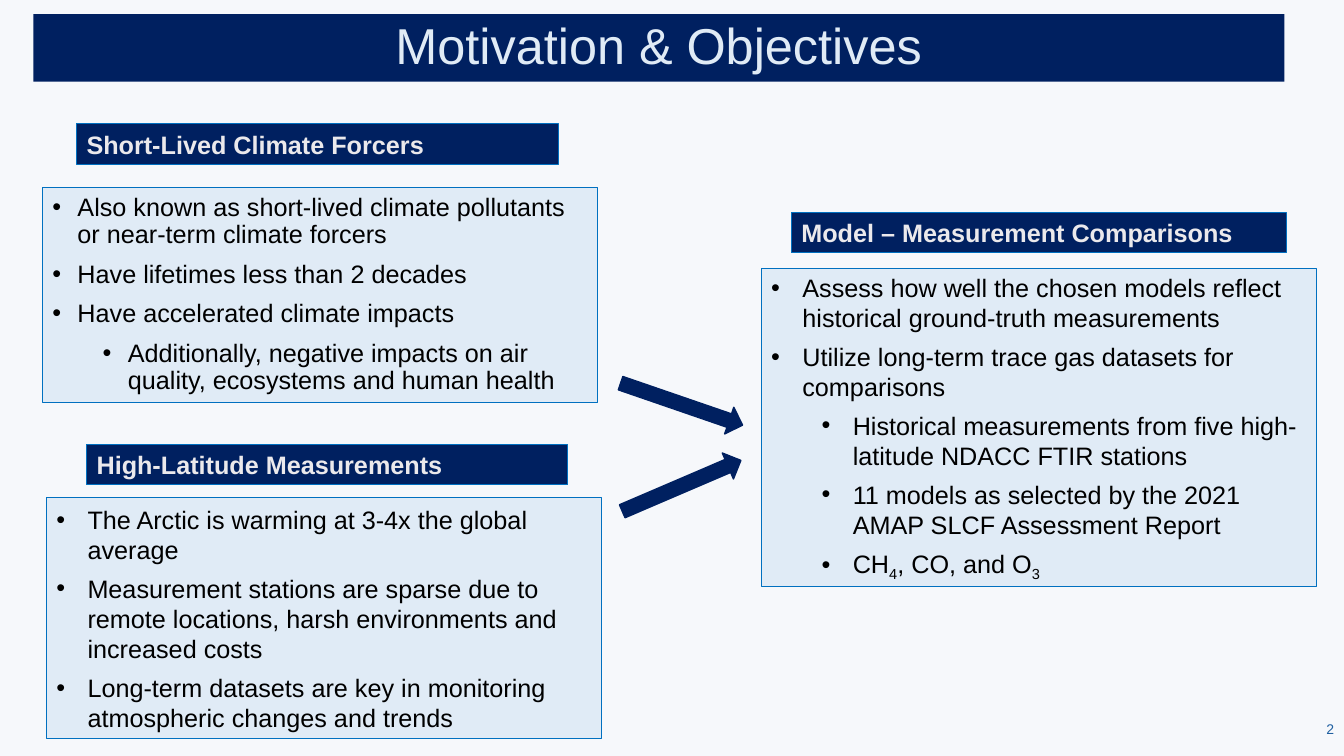
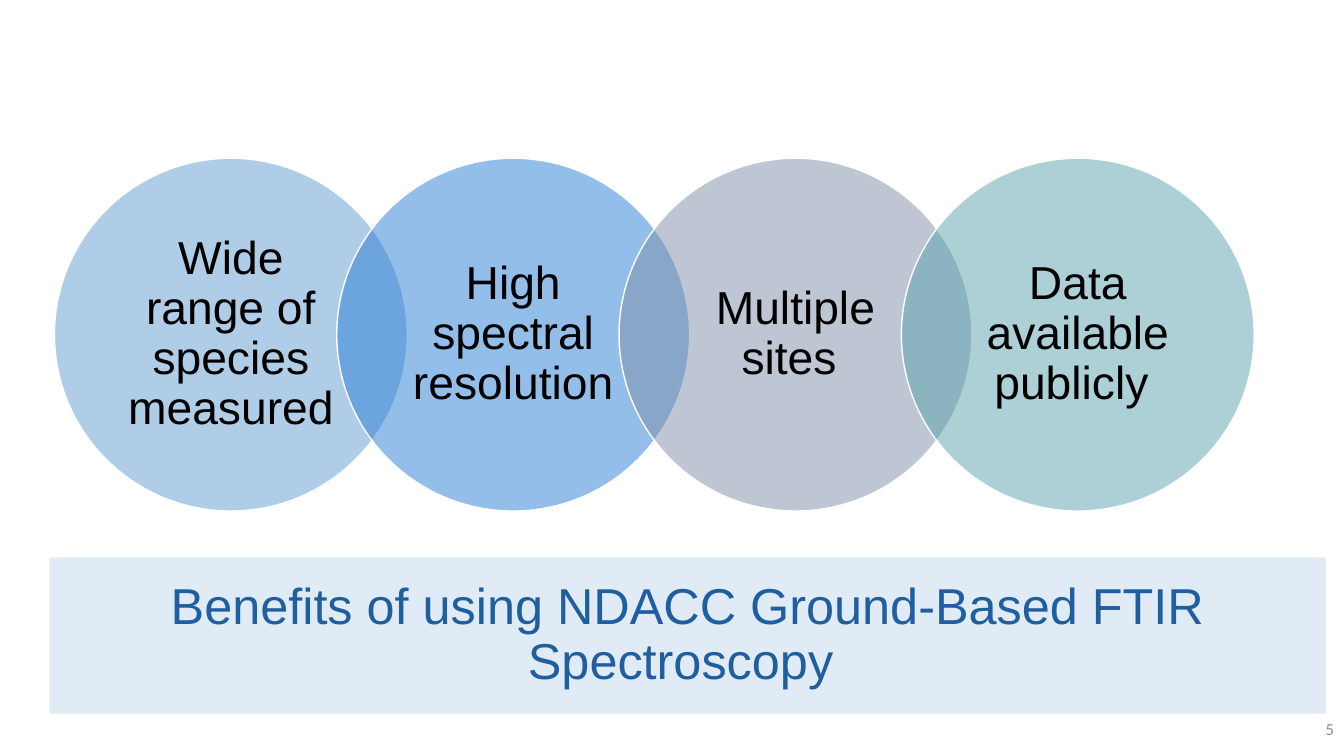
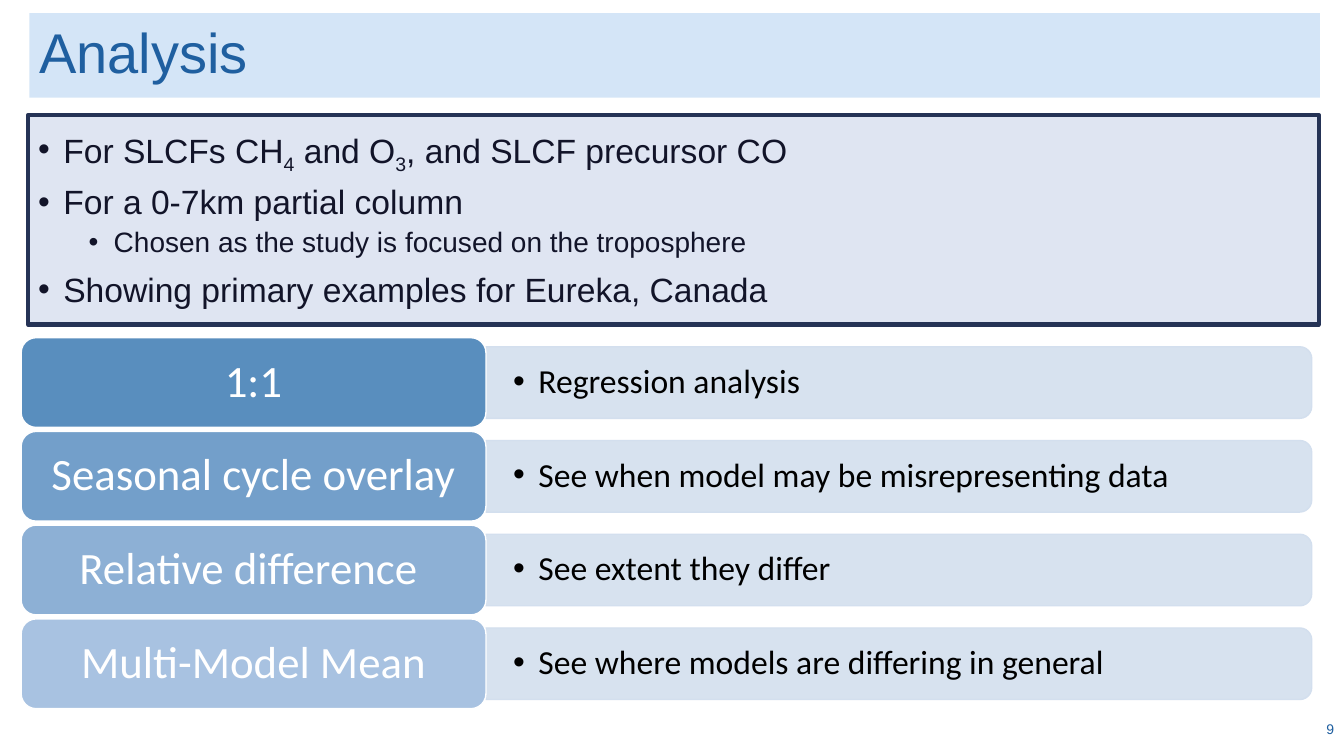
"""Builds three slides on trace gas measurements and model comparisons."""
import dataclasses

import lxml.etree
import pptx
import pptx.dml.color
import pptx.enum.shapes
import pptx.enum.text
import pptx.oxml.ns
import pptx.util

Inches = pptx.util.Inches
Pt = pptx.util.Pt
SHAPES = pptx.enum.shapes.MSO_SHAPE
ALIGN = pptx.enum.text.PP_ALIGN
ANCHOR = pptx.enum.text.MSO_ANCHOR
qn = pptx.oxml.ns.qn


@dataclasses.dataclass(frozen=True)
class Theme:
    """Colours, fonts and type sizes of the deck."""
    heading_font: str = "Arial"
    row_font: str = "Calibri"
    navy: str = "002060"
    blue: str = "1F5FA0"
    edge: str = "0070C0"
    pale: str = "E0EBF6"
    title_pale: str = "D4E5F7"
    heading_text: str = "EBE9EC"
    mist: str = "F6F8FB"
    white: str = "FFFFFF"
    black: str = "000000"
    grey: str = "8C8C8C"
    scope_fill: str = "DBE2F1"
    scope_edge: str = "253356"
    scope_text: str = "121429"
    row_fill: str = "D3DFEE"
    title_size: int = 36
    large_title_size: int = 40
    body_size: int = 18
    circle_size: int = 33
    label_size: int = 32
    scope_size: int = 24
    scope_detail_size: int = 20
    number_size: int = 10
    large_number_size: int = 12


THEME = Theme()

MOTIVATION = {
    "title": "Motivation & Objectives", "number": "2", "background": THEME.mist,
    "title_box": (0.33, 0.14, 12.41, 0.67), "title_fill": THEME.navy,
    "title_text": {"color": THEME.pale},
}
BENEFITS = {
    "title": "Benefits of using NDACC Ground-Based FTIR Spectroscopy ", "number": "5",
    "background": THEME.white,
    "title_box": (0.49, 5.53, 12.66, 1.55), "title_fill": THEME.pale,
    "number_text": {"font": THEME.row_font, "sizes": (THEME.large_number_size,),
                    "color": THEME.grey},
}
ANALYSIS = {
    "title": "Analysis", "number": "9", "background": THEME.white,
    "title_box": (0.29, 0.13, 12.8, 0.84), "title_fill": THEME.title_pale,
    "title_text": {"sizes": (THEME.large_title_size,), "align": ALIGN.LEFT},
}

TOPICS = [
    ("Short-Lived Climate Forcers", (0.76, 1.23, 4.78, 0.4), (0.42, 1.86, 5.51, 2.13),
     {"hang": 0.25, "line_spacing": 0.9, "after": 2.7}, [
         (0, "Also known as short-lived climate pollutants or near-term\u00a0climate forcers"),
         (0, "Have lifetimes less than 2 decades"),
         (0, "Have accelerated climate impacts"),
         (1, "Additionally, negative impacts on air quality, ecosystems and human health")]),
    ("High-Latitude Measurements", (0.86, 4.41, 4.77, 0.4), (0.46, 4.94, 5.51, 2.39),
     {"hang": 0.31}, [
         (0, "The Arctic is warming at 3-4x the global average"),
         (0, "Measurement stations are sparse due to remote locations, "
             "harsh environments and increased costs"),
         (0, "Long-term datasets are key in monitoring atmospheric changes and trends")]),
    ("Model – Measurement Comparisons", (7.85, 2.11, 4.91, 0.4), (7.55, 2.66, 5.51, 3.16),
     {"hang": 0.31}, [
         (0, "Assess how well the chosen models reflect historical ground-truth measurements"),
         (0, "Utilize long-term trace gas datasets for comparisons"),
         (1, "Historical measurements from five high-latitude NDACC FTIR stations"),
         (1, "11 models as selected by the 2021 AMAP SLCF Assessment Report"),
         (1, "CH_4_, CO, and O_3_")]),
]
ARROWS = [(3.87, 19), (4.68, 336.8)]

CIRCLES = [
    ("Wide range of species measured ", "629DD1"),
    ("High spectral resolution ", "297FD5"),
    ("Multiple sites ", "7F8FA9"),
    ("Data available publicly ", "5AA2AE"),
]

SCOPE = [
    (0, "For SLCFs CH_4_ and O_3_, and SLCF precursor CO"),
    (0, "For a 0-7km partial column"),
    (1, "Chosen as the study is focused on the troposphere"),
    (0, "Showing primary examples for Eureka, Canada"),
]
METHODS = [
    ("1:1", "Regression analysis", "598EBE"),
    ("Seasonal cycle overlay", "See when model may be misrepresenting data", "739FCA"),
    ("Relative difference ", "See extent they differ", "8DB0D5"),
    ("Multi-Model Mean", "See where models are differing in general", "A8C2E1"),
]

BASE_TEXT = {
    "font": THEME.heading_font, "sizes": (THEME.body_size,), "color": THEME.black,
    "bold": False, "align": ALIGN.LEFT, "anchor": ANCHOR.MIDDLE, "line_spacing": 1.0,
    "before": (0,), "after": 0, "hang": None, "insets": (0.1, 0.05),
}
TITLE_TEXT = {"sizes": (THEME.title_size,), "color": THEME.blue,
              "align": ALIGN.CENTER, "line_spacing": 0.9}
NUMBER_TEXT = {"sizes": (THEME.number_size,), "color": THEME.blue, "align": ALIGN.RIGHT}
HEADING_TEXT = {"color": THEME.heading_text, "bold": True, "anchor": ANCHOR.TOP}
TOPIC_TEXT = {"before": (6,)}
CIRCLE_TEXT = {"sizes": (THEME.circle_size,), "align": ALIGN.CENTER,
               "line_spacing": 0.9, "insets": (0.19, 0.05)}
SCOPE_TEXT = {"sizes": (THEME.scope_size, THEME.scope_detail_size), "before": (10, 5),
              "color": THEME.scope_text, "line_spacing": 0.9, "hang": 0.25}
LABEL_TEXT = {"font": THEME.row_font, "sizes": (THEME.label_size,), "color": THEME.white,
              "align": ALIGN.CENTER, "line_spacing": 0.9, "insets": (0.13, 0.07)}
DETAIL_TEXT = {"font": THEME.row_font, "sizes": (THEME.scope_size,),
               "line_spacing": 0.9, "hang": 0.25, "insets": (0.27, 0.14)}


def rgb(value):
    return pptx.dml.color.RGBColor.from_string(value)


def apply(target, values):
    for name, value in values.items():
        setattr(target, name, value)


def place(box):
    return [Inches(length) for length in box]


def add_bullet(paragraph, level, hang):
    properties = paragraph._p.get_or_add_pPr()
    properties.set("marL", str(Inches(hang + 0.5 * level)))
    properties.set("indent", str(-Inches(hang)))
    lxml.etree.SubElement(properties, qn("a:buFont")).set("typeface", THEME.heading_font)
    lxml.etree.SubElement(properties, qn("a:buChar")).set("char", "•")


def write(shape, items, *styles):
    text = dict(BASE_TEXT)
    for style in styles:
        text.update(style)
    side, top = place(text["insets"])
    frame = shape.text_frame
    apply(frame, {"word_wrap": True, "auto_size": pptx.enum.text.MSO_AUTO_SIZE.NONE,
                  "vertical_anchor": text["anchor"], "margin_left": side,
                  "margin_right": side, "margin_top": top, "margin_bottom": top})
    for index, (level, words) in enumerate(items):
        paragraph = frame.add_paragraph() if index else frame.paragraphs[0]
        before = text["before"][min(level, len(text["before"]) - 1)]
        size = text["sizes"][min(level, len(text["sizes"]) - 1)]
        apply(paragraph, {"level": level, "alignment": text["align"],
                          "line_spacing": text["line_spacing"],
                          "space_before": Pt(before), "space_after": Pt(text["after"])})
        if text["hang"]:
            add_bullet(paragraph, level, text["hang"])
        for position, piece in enumerate(words.split("_")):
            if not piece:
                continue
            run = paragraph.add_run()
            run.text = piece
            apply(run.font, {"name": text["font"], "size": Pt(size), "bold": text["bold"]})
            run.font.color.rgb = rgb(text["color"])
            if position % 2:
                run.font._element.set("baseline", "-25000")


def add_panel(slide, kind, box, fill, line, width=0.75, opacity=100, rotation=0):
    panel = slide.shapes.add_shape(kind, *place(box))
    panel.shadow.inherit = False
    panel.rotation = rotation
    panel.fill.solid()
    panel.fill.fore_color.rgb = rgb(fill)
    panel.line.color.rgb = rgb(line)
    panel.line.width = Pt(width)
    if opacity < 100:
        colour = panel.element.spPr.find(qn("a:solidFill")).find(qn("a:srgbClr"))
        lxml.etree.SubElement(colour, qn("a:alpha")).set("val", str(opacity * 1000))
    return panel


def add_text(slide, box, items, *styles):
    write(slide.shapes.add_textbox(*place(box)), items, *styles)


def start_slide(deck, content):
    slide = deck.slides.add_slide(deck.slide_layouts[5])
    slide.background.fill.solid()
    slide.background.fill.fore_color.rgb = rgb(content["background"])
    title = slide.shapes.title
    apply(title, dict(zip(("left", "top", "width", "height"), place(content["title_box"]))))
    title.fill.solid()
    title.fill.fore_color.rgb = rgb(content["title_fill"])
    write(title, [(0, content["title"])], TITLE_TEXT, content.get("title_text", {}))
    add_text(slide, (12.8, 7.04, 0.53, 0.38), [(0, content["number"])],
             NUMBER_TEXT, content.get("number_text", {}))
    return slide


def build_motivation(deck):
    slide = start_slide(deck, MOTIVATION)
    for heading, heading_box, body_box, style, points in TOPICS:
        body = add_panel(slide, SHAPES.RECTANGLE, body_box, THEME.pale, THEME.edge)
        write(body, points, TOPIC_TEXT, style)
        header = add_panel(slide, SHAPES.RECTANGLE, heading_box, THEME.navy, THEME.edge)
        write(header, [(0, heading)], HEADING_TEXT)
    for top, angle in ARROWS:
        add_panel(slide, SHAPES.RIGHT_ARROW, (6.12, top, 1.28, 0.28),
                  THEME.navy, THEME.navy, 1, rotation=angle)


def build_benefits(deck):
    slide = start_slide(deck, BENEFITS)
    diameter = 3.5
    step = 0.8 * diameter
    for index, (benefit, colour) in enumerate(CIRCLES):
        circle = add_panel(slide, SHAPES.OVAL, (0.54 + index * step, 1.57, diameter, diameter),
                           colour, THEME.white, 1, opacity=50)
        write(circle, [(0, benefit)], CIRCLE_TEXT)


def build_analysis(deck):
    slide = start_slide(deck, ANALYSIS)
    scope = add_panel(slide, SHAPES.RECTANGLE, (0.28, 1.14, 12.8, 2.08),
                      THEME.scope_fill, THEME.scope_edge, 3, opacity=87)
    write(scope, SCOPE, SCOPE_TEXT)
    label_left, label_width, label_height = 0.21, 4.61, 0.89
    bar_length, bar_height = 8.19, 0.71
    bar_left = label_left + label_width + (bar_length - bar_height) / 2
    for index, (method, purpose, colour) in enumerate(METHODS):
        top = 3.35 + 0.93 * index
        middle = top + label_height / 2
        add_panel(slide, SHAPES.ROUND_2_SAME_RECTANGLE,
                  (bar_left, middle - bar_length / 2, bar_height, bar_length),
                  THEME.row_fill, THEME.row_fill, 1, opacity=90, rotation=90)
        add_text(slide, (label_left + label_width, middle - 0.32, 8.15, 0.64),
                 [(0, purpose)], DETAIL_TEXT)
        label = add_panel(slide, SHAPES.ROUNDED_RECTANGLE,
                          (label_left, top, label_width, label_height),
                          colour, THEME.white, 1)
        write(label, [(0, method)], LABEL_TEXT)


def main():
    deck = pptx.Presentation()
    apply(deck, {"slide_width": Inches(13.33), "slide_height": Inches(7.5)})
    for build in (build_motivation, build_benefits, build_analysis):
        build(deck)
    deck.save("out.pptx")


if __name__ == "__main__":
    main()
